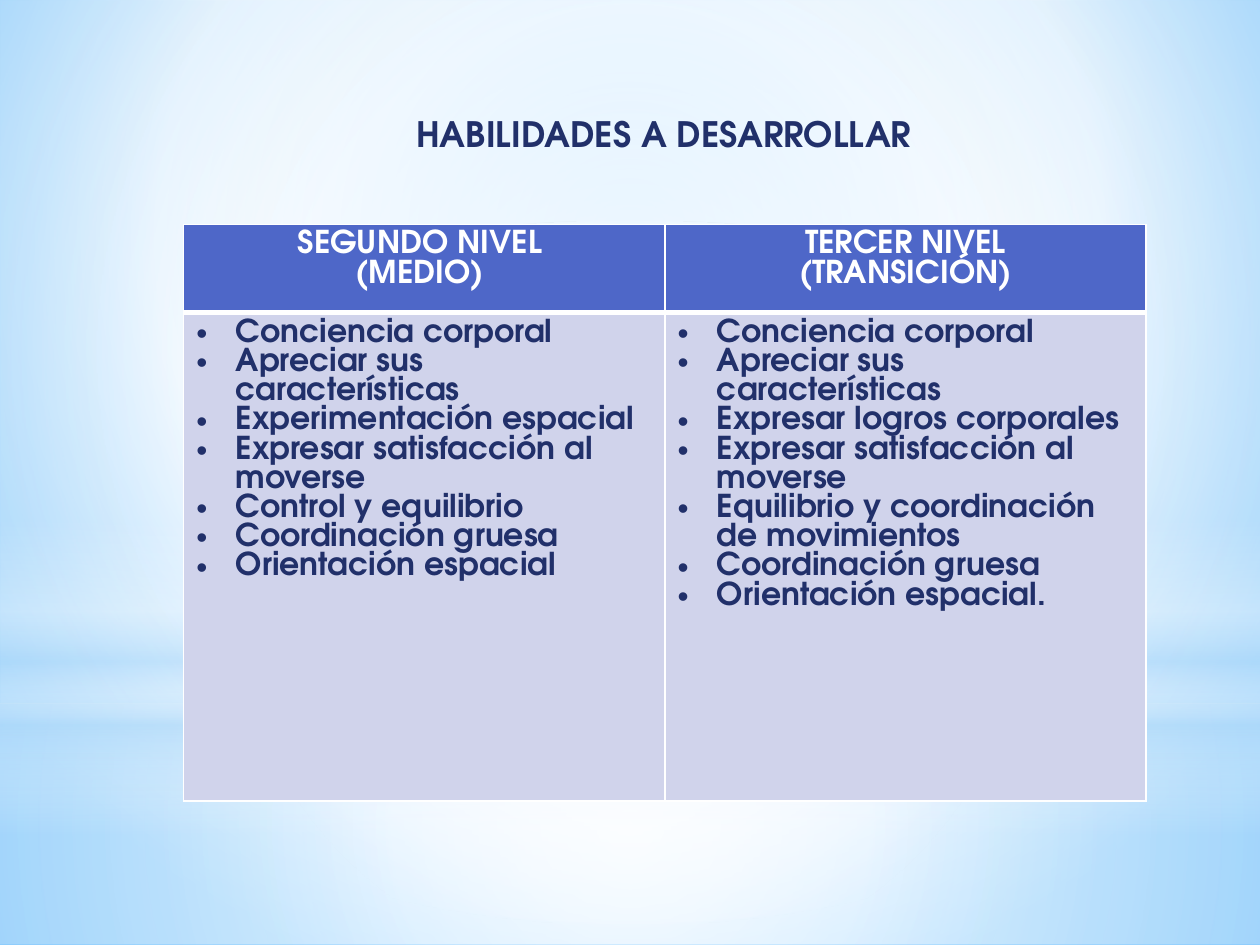
from lxml import etree
from pptx import Presentation
from pptx.dml.color import RGBColor
from pptx.enum import shapes, text
from pptx.oxml import ns
from pptx.util import Pt

NAVY = RGBColor(0x21, 0x30, 0x6A)
BLUE = RGBColor(0x4E, 0x67, 0xC8)
LILAC = RGBColor(0xD0, 0xD3, 0xEB)
WHITE = RGBColor(0xFF, 0xFF, 0xFF)
SKY = RGBColor(0xB4, 0xDC, 0xFA)
PALE = RGBColor(0x9E, 0xD5, 0xFF)
DEEP = RGBColor(0x5B, 0xB9, 0xFF)
FONT = "TeX Gyre Adventor"
MID = (50, 50, 50, 50)
HEADS = [["SEGUNDO NIVEL ", "(MEDIO) "], ["TERCER NIVEL", "(TRANSICIÓN)"]]
SKILLS = [
    ["Conciencia corporal", "Apreciar sus características",
     "Experimentación espacial", "Expresar satisfacción al moverse",
     "Control y equilibrio", "Coordinación gruesa", "Orientación espacial"],
    ["Conciencia corporal", "Apreciar sus características",
     "Expresar logros corporales", "Expresar satisfacción al moverse",
     "Equilibrio y coordinación de movimientos", "Coordinación gruesa",
     "Orientación espacial."],
]


def add(parent, tag, **attrs):
    """Append a drawing element and return it."""
    node = etree.SubElement(parent, ns.qn(tag))
    for key, value in attrs.items():
        node.set(key, str(value))
    return node


def blend(fill, root, stops, focus=None):
    """Give the newest fill under root a circular or downward gradient."""
    fill.gradient()
    grad = root.xpath(".//a:gradFill")[-1]
    for child in list(grad):
        grad.remove(child)
    group = add(grad, "a:gsLst")
    for place, color, alpha in stops:
        stop = add(group, "a:gs", pos=place * 1000)
        tint = add(stop, "a:srgbClr", val=color)
        if alpha < 100:
            add(tint, "a:alpha", val=alpha * 1000)
    if focus:
        ring = add(grad, "a:path", path="circle")
        add(ring, "a:fillToRect", **{s: n * 1000 for s, n in zip("ltrb", focus)})
    else:
        add(grad, "a:lin", ang=5400000, scaled=0)


def glow(slide, kind, top, high, stops, focus=None):
    """Place one full-width translucent layer."""
    layer = slide.shapes.add_shape(kind, 0, Pt(top), Pt(720), Pt(high))
    layer.shadow.inherit = False
    layer.line.fill.background()
    blend(layer.fill, layer._element, stops, focus)


def draw_sky(slide):
    """Paint the background and its layers of light."""
    blend(slide.background.fill, slide._element,
          [(0, PALE, 100), (60, WHITE, 100), (100, DEEP, 100)], (20, 10, 20, 60))
    rect, oval = shapes.MSO_SHAPE.RECTANGLE, shapes.MSO_SHAPE.OVAL
    glow(slide, rect, 402, 138,
         [(0, WHITE, 91), (37, WHITE, 76), (100, SKY, 79)], MID)
    glow(slide, rect, 0, 402,
         [(0, WHITE, 89), (48, WHITE, 62), (100, SKY, 79)], MID)
    glow(slide, rect, 297, 180,
         [(0, WHITE, 0), (29, WHITE, 30), (45, SKY, 40),
          (55, WHITE, 26), (65, SKY, 60), (100, WHITE, 0)])
    glow(slide, oval, 126, 402, [(0, WHITE, 100), (56, WHITE, 0)], MID)


def write(par, words, size, color):
    """Add one bold run to a paragraph."""
    run = par.add_run()
    run.text = words
    run.font.name, run.font.size, run.font.bold = FONT, Pt(size), True
    run.font.color.rgb = color


def draw_title(slide, left, top, width, high):
    """Write the centred title in its box."""
    box = slide.shapes.add_textbox(Pt(left), Pt(top), Pt(width), Pt(high))
    frame = box.text_frame
    frame.word_wrap = True
    frame.vertical_anchor = text.MSO_ANCHOR.BOTTOM
    par = frame.paragraphs[0]
    par.alignment = text.PP_ALIGN.CENTER
    write(par, "HABILIDADES A DESARROLLAR", 20, NAVY)


def fill_cell(cell, lines, ink, paint, thick, listed):
    """Border, fill and write one cell, as a heading or a bullet list."""
    props = cell._tc.get_or_add_tcPr()
    for side in "LRTB":
        edge = add(props, "a:ln" + side, w=Pt(3 if side == thick else 1))
        add(add(edge, "a:solidFill"), "a:srgbClr", val=WHITE)
    cell.fill.solid()
    cell.fill.fore_color.rgb = paint
    frame = cell.text_frame
    for row, words in enumerate(lines):
        par = frame.add_paragraph() if row else frame.paragraphs[0]
        if listed:
            form = par._p.get_or_add_pPr()
            form.set("marL", str(Pt(22.5)))
            form.set("indent", str(-Pt(22.5)))
            add(form, "a:buFont", typeface="Arial")
            add(form, "a:buChar", char="•")
        else:
            par.alignment = text.PP_ALIGN.CENTER
        write(par, words, 18, ink)


def draw_table(slide, left, top, width, high):
    """Build the two-level table of skills."""
    grid = slide.shapes.add_table(
        2, 2, Pt(left), Pt(top), Pt(width), Pt(high)).table
    grid.rows[0].height = Pt(48.5)
    grid.rows[1].height = Pt(high - 48.5)
    for col, (head, skills) in enumerate(zip(HEADS, SKILLS)):
        grid.columns[col].width = Pt(width / 2)
        fill_cell(grid.cell(0, col), head, WHITE, BLUE, "B", False)
        fill_cell(grid.cell(1, col), skills, NAVY, LILAC, "T", True)


def main():
    """Build and save the slide."""
    deck = Presentation()
    deck.slide_width, deck.slide_height = Pt(720), Pt(540)
    slide = deck.slides.add_slide(deck.slide_layouts[6])
    draw_sky(slide)
    draw_title(slide, 206.6, 60.5, 345.6, 31.5)
    draw_table(slide, 105, 128.2, 550, 327.5)
    deck.save("out.pptx")


if __name__ == "__main__":
    main()
